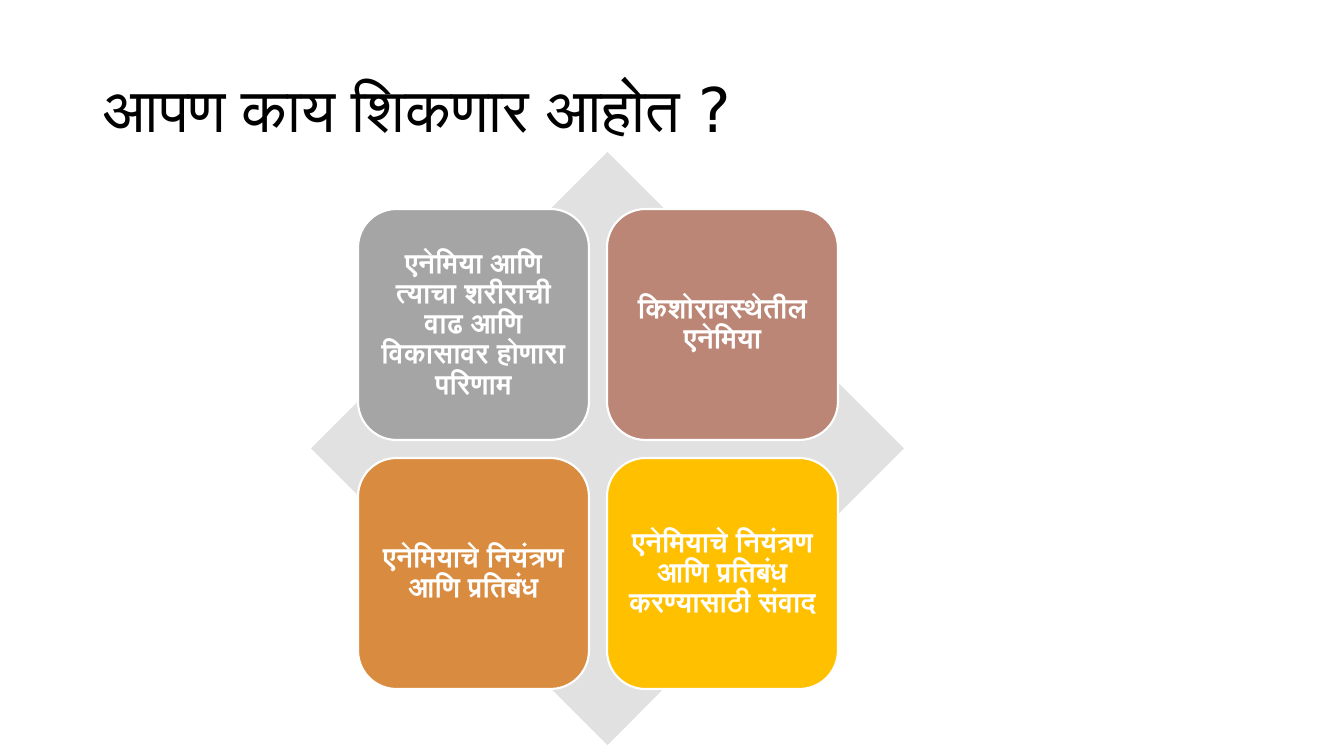
from pptx import Presentation
from pptx.dml.color import RGBColor
from pptx.enum.shapes import MSO_SHAPE
from pptx.enum.text import MSO_ANCHOR, PP_ALIGN
from pptx.util import Emu, Pt

DIAMOND, ROUND_RECT = MSO_SHAPE.DIAMOND, MSO_SHAPE.ROUNDED_RECTANGLE
LEFT, CENTER, MIDDLE = PP_ALIGN.LEFT, PP_ALIGN.CENTER, MSO_ANCHOR.MIDDLE

TITLE = "आपण काय शिकणार आहोत ?"
TOPICS = [
    ("एनेमिया आणि त्याचा शरीराची वाढ आणि विकासावर होणारा परिणाम", "A5A5A5"),
    ("किशोरावस्थेतील एनेमिया", "BB8676"),
    ("एनेमियाचे नियंत्रण आणि प्रतिबंध", "D98B3F"),
    ("एनेमियाचे नियंत्रण आणि प्रतिबंध करण्यासाठी संवाद", "FFC000"),
]
THEME = {
    "title": {"font": "DejaVu Sans Mono", "size": 44, "color": "000000"},
    "topic": {"font": "Calibri", "size": 20, "color": "FFFFFF", "bold": True},
    "diamond": "E1E1E1",
    "outline": "FFFFFF",
    "outline_pt": 1.5,
}

EMU_PER_PX = 914400 / 100.8
SLIDE = (1344, 756)
TITLE_BOX = (93, 40, 1159, 146)
DIAMOND_BOX = (311, 152, 593, 593)
GRID_LEFT, GRID_TOP, CARD, PITCH, COLUMNS = 358, 209, 231, 249, 2


def px(n):
    return Emu(round(n * EMU_PER_PX))


def rgb(color):
    return RGBColor.from_string(color)


def write(shape, text, *, font, size, color, bold=False, align=LEFT, inset=(10, 5)):
    tf = shape.text_frame
    tf.word_wrap = True
    tf.vertical_anchor = MIDDLE
    tf.margin_left = tf.margin_right = px(inset[0])
    tf.margin_top = tf.margin_bottom = px(inset[1])
    p = tf.paragraphs[0]
    p.alignment = align
    p.line_spacing = 0.9
    r = p.add_run()
    r.text = text
    r.font.name, r.font.size, r.font.bold = font, Pt(size), bold
    r.font.color.rgb = rgb(color)


def add_block(s, kind, box, fill, outline=None):
    sp = s.shapes.add_shape(kind, *map(px, box))
    sp.shadow.inherit = False
    sp.fill.solid()
    sp.fill.fore_color.rgb = rgb(fill)
    if outline:
        sp.line.color.rgb = rgb(outline)
        sp.line.width = Pt(THEME["outline_pt"])
    else:
        sp.line.fill.background()
    return sp


def main():
    prs = Presentation()
    prs.slide_width, prs.slide_height = map(px, SLIDE)
    s = prs.slides.add_slide(prs.slide_layouts[6])

    write(s.shapes.add_textbox(*map(px, TITLE_BOX)), TITLE, **THEME["title"])
    add_block(s, DIAMOND, DIAMOND_BOX, THEME["diamond"])
    for i, (text, fill) in enumerate(TOPICS):
        row, col = divmod(i, COLUMNS)
        box = (GRID_LEFT + col * PITCH, GRID_TOP + row * PITCH, CARD, CARD)
        card = add_block(s, ROUND_RECT, box, fill, THEME["outline"])
        write(card, text, align=CENTER, inset=(8, 8), **THEME["topic"])

    prs.save("out.pptx")


if __name__ == "__main__":
    main()
